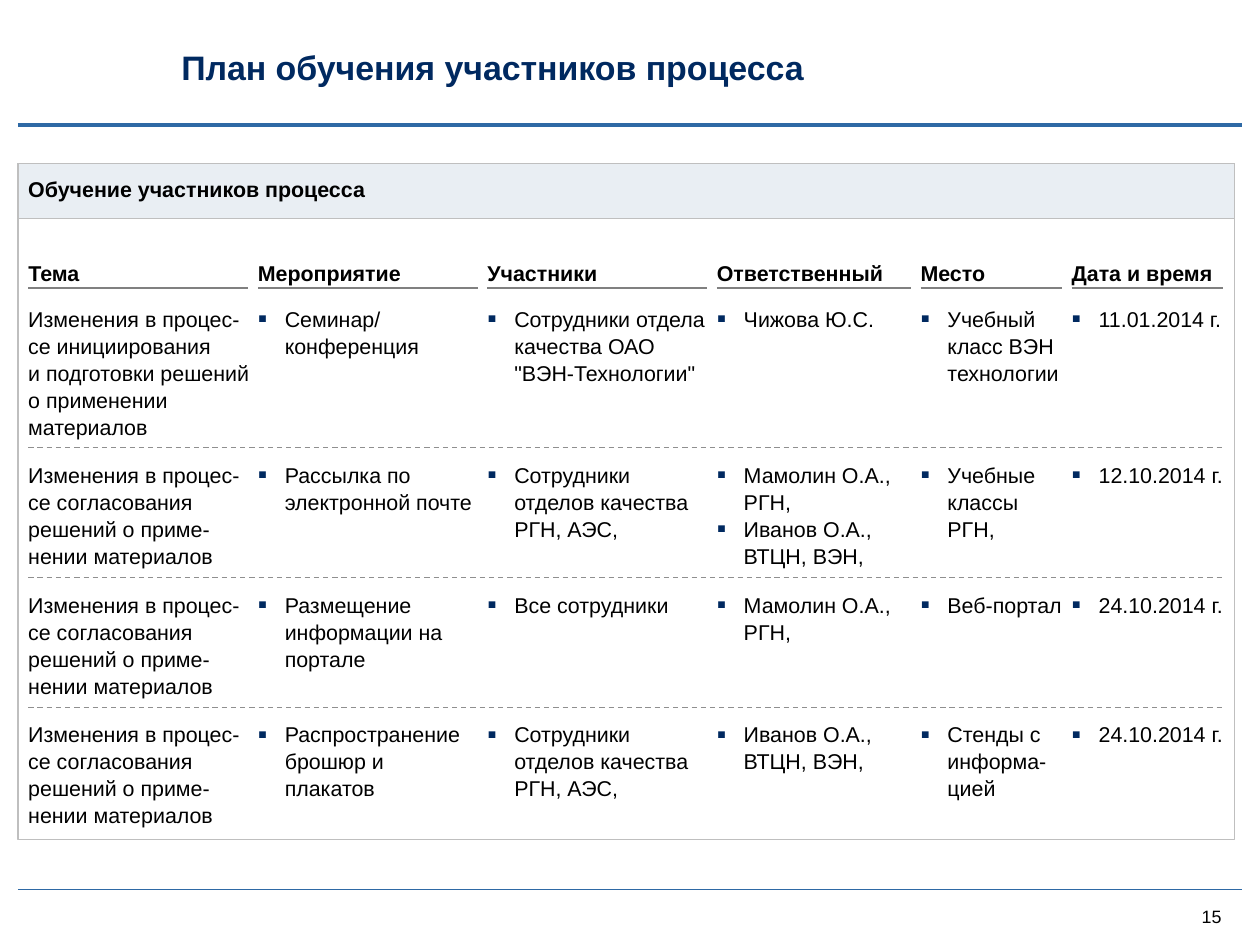
import pptx
import pptx.util
from lxml import etree
from pptx.dml.color import RGBColor
from pptx.enum.dml import MSO_LINE
from pptx.enum.shapes import MSO_CONNECTOR, MSO_SHAPE
from pptx.enum.text import MSO_ANCHOR, MSO_AUTO_SIZE, PP_ALIGN
from pptx.oxml.ns import qn
from pptx.util import Inches, Pt

NAVY = RGBColor(0x00, 0x29, 0x60)
BLUE = RGBColor(0x2E, 0x69, 0xA5)
BLACK = RGBColor(0x00, 0x00, 0x00)
PALE = RGBColor(0xE9, 0xEE, 0xF3)
FRAME_GRAY = RGBColor(0xBF, 0xBF, 0xBF)
RULE_GRAY = RGBColor(0x80, 0x80, 0x80)
DASH_GRAY = RGBColor(0x8F, 0x8F, 0x8F)

TITLE_FONT = {"name": "Arial", "size": Pt(19), "bold": True}
HEADING_FONT = {"name": "Arial", "size": Pt(12), "bold": True}
BODY_FONT = {"name": "Arial", "size": Pt(12), "bold": False}
NUMBER_FONT = {"name": "Arial", "size": Pt(10), "bold": False}

SLIDE_WIDTH, SLIDE_HEIGHT = 9.8, 7.35
EDGE_LEFT, EDGE_RIGHT = 0.14, 9.66
PANEL_TOP, PANEL_WIDTH, PANEL_HEIGHT, BAND_HEIGHT = 1.27, 9.46, 5.26, 0.43
GRID_LEFT, GRID_RIGHT, COLUMN_GAP = 0.22, 9.52, 0.075
HEADING_TOP, HEADING_HEIGHT = 2.02, 0.22
BODY_TOP, LINE_HEIGHT, ROW_GAP = 2.37, 0.2025, 0.2
BULLET_INDENT = 0.21

COLUMNS = [("Тема", 1.71), ("Мероприятие", 1.71), ("Участники", 1.71),
           ("Ответственный", 1.51), ("Место", 1.1), ("Дата и время", 1.18)]
APPROVAL = "Изменения в процес-се согласования решений о приме-нении материалов"
QUALITY_STAFF = "Сотрудники отделов качества РГН, АЭС,"
# Each row: number of text lines, then one entry per column
ROWS = [
    (5, ["Изменения в процес-се инициирования \vи подготовки решений \vо применении материалов",
         "Семинар/ конференция", "Сотрудники отдела качества ОАО \"ВЭН-Технологии\"",
         "Чижова Ю.С.", "Учебный класс ВЭН технологии", "11.01.2014 г."]),
    (4, [APPROVAL, "Рассылка по электронной почте", QUALITY_STAFF,
         "Мамолин О.А., РГН,\nИванов О.А., ВТЦН, ВЭН,", "Учебные классы РГН,", "12.10.2014 г."]),
    (4, [APPROVAL, "Размещение информации на портале", "Все сотрудники",
         "Мамолин О.А., РГН,", "Веб-портал", "24.10.2014 г."]),
    (4, [APPROVAL, "Распространение брошюр и плакатов", QUALITY_STAFF,
         "Иванов О.А., ВТЦН, ВЭН,", "Стенды с информа-цией", "24.10.2014 г."]),
]


def add_bullet(paragraph):
    properties = paragraph._p.get_or_add_pPr()
    properties.set("marL", str(Inches(BULLET_INDENT)))
    properties.set("indent", str(-Inches(BULLET_INDENT)))
    color = etree.SubElement(properties, qn("a:buClr"))
    etree.SubElement(color, qn("a:srgbClr"), val=str(NAVY))
    etree.SubElement(properties, qn("a:buSzPct"), val="125000")
    etree.SubElement(properties, qn("a:buFont"), typeface="Arial")
    etree.SubElement(properties, qn("a:buChar"), char="▪")


def write_text(shape, text, font_values, color=BLACK, anchor=MSO_ANCHOR.TOP, bottom=0,
               bulleted=False, wrap=True, align=PP_ALIGN.LEFT, spacing=1.0):
    frame = shape.text_frame
    frame.text = text
    frame_values = {"word_wrap": wrap, "auto_size": MSO_AUTO_SIZE.NONE, "vertical_anchor": anchor,
                    "margin_left": 0, "margin_right": 0, "margin_top": 0,
                    "margin_bottom": Inches(bottom)}
    for name, value in frame_values.items():
        setattr(frame, name, value)
    for paragraph in frame.paragraphs:
        if bulleted:
            add_bullet(paragraph)
        paragraph.alignment = align
        paragraph.line_spacing = spacing
        for run in paragraph.runs:
            for name, value in font_values.items():
                setattr(run.font, name, value)
            run.font.color.rgb = color


def add_text(slide, left, top, width, height, text, font_values, **options):
    box = slide.shapes.add_textbox(Inches(left), Inches(top), Inches(width), Inches(height))
    write_text(box, text, font_values, **options)


def add_rule(slide, left, right, top, color, weight=0.75, dash=None):
    rule = slide.shapes.add_connector(MSO_CONNECTOR.STRAIGHT, Inches(left), Inches(top),
                                      Inches(right), Inches(top))
    rule.line.color.rgb = color
    rule.line.width = Pt(weight)
    if dash:
        rule.line.dash_style = dash
    etree.SubElement(rule._element.spPr, qn("a:effectLst"))


def add_panel(slide, height, fill=None):
    panel = slide.shapes.add_shape(MSO_SHAPE.RECTANGLE, Inches(EDGE_LEFT), Inches(PANEL_TOP),
                                   Inches(PANEL_WIDTH), Inches(height))
    panel.shadow.inherit = False
    panel.line.color.rgb = FRAME_GRAY
    panel.line.width = Pt(0.75)
    if fill is None:
        panel.fill.background()
    else:
        panel.fill.solid()
        panel.fill.fore_color.rgb = fill


def add_title(slide, text):
    title = slide.shapes.title
    place = {"left": 1.41, "top": 0.36, "width": 7.27, "height": 0.32}
    for name, value in place.items():
        setattr(title, name, Inches(value))
    write_text(title, text, TITLE_FONT, color=NAVY, anchor=MSO_ANCHOR.MIDDLE)


def add_heading(slide, left, top, width, text):
    add_text(slide, left, top, width, HEADING_HEIGHT, text, HEADING_FONT,
             anchor=MSO_ANCHOR.BOTTOM, bottom=0.02)


def column_lefts():
    return [GRID_LEFT + sum(width + COLUMN_GAP for _, width in COLUMNS[:index])
            for index in range(len(COLUMNS))]


def add_plan(slide):
    """Column headings, then the rows with a dashed line between them."""
    lefts = column_lefts()
    for left, (heading, width) in zip(lefts, COLUMNS):
        add_heading(slide, left, HEADING_TOP, width, heading)
        add_rule(slide, left, left + width, HEADING_TOP + HEADING_HEIGHT, RULE_GRAY)
    top = BODY_TOP
    for row, (line_count, texts) in enumerate(ROWS):
        height = line_count * LINE_HEIGHT
        if row:
            add_rule(slide, GRID_LEFT, GRID_RIGHT, top - ROW_GAP / 2, DASH_GRAY, dash=MSO_LINE.DASH)
        for column, (left, text) in enumerate(zip(lefts, texts)):
            width = COLUMNS[column][1] + (0 if column else COLUMN_GAP)
            add_text(slide, left, top, width, height, text, BODY_FONT,
                     bulleted=column > 0, spacing=1.05)
        top += height + ROW_GAP


def main():
    presentation = pptx.Presentation()
    presentation.slide_width = Inches(SLIDE_WIDTH)
    presentation.slide_height = Inches(SLIDE_HEIGHT)
    slide = presentation.slides.add_slide(presentation.slide_layouts[5])
    add_title(slide, "План обучения участников процесса")
    add_rule(slide, EDGE_LEFT, EDGE_RIGHT, 0.97, BLUE, weight=2.25)
    add_rule(slide, EDGE_LEFT, EDGE_RIGHT, 6.92, BLUE)
    add_text(slide, 9.25, 7.04, 0.25, 0.17, "15", NUMBER_FONT,
             anchor=MSO_ANCHOR.MIDDLE, align=PP_ALIGN.RIGHT, wrap=False)
    add_panel(slide, PANEL_HEIGHT)
    add_panel(slide, BAND_HEIGHT, PALE)
    add_heading(slide, GRID_LEFT, 1.37, 4.66, "Обучение участников процесса")
    add_plan(slide)
    presentation.save("out.pptx")


if __name__ == "__main__":
    main()
